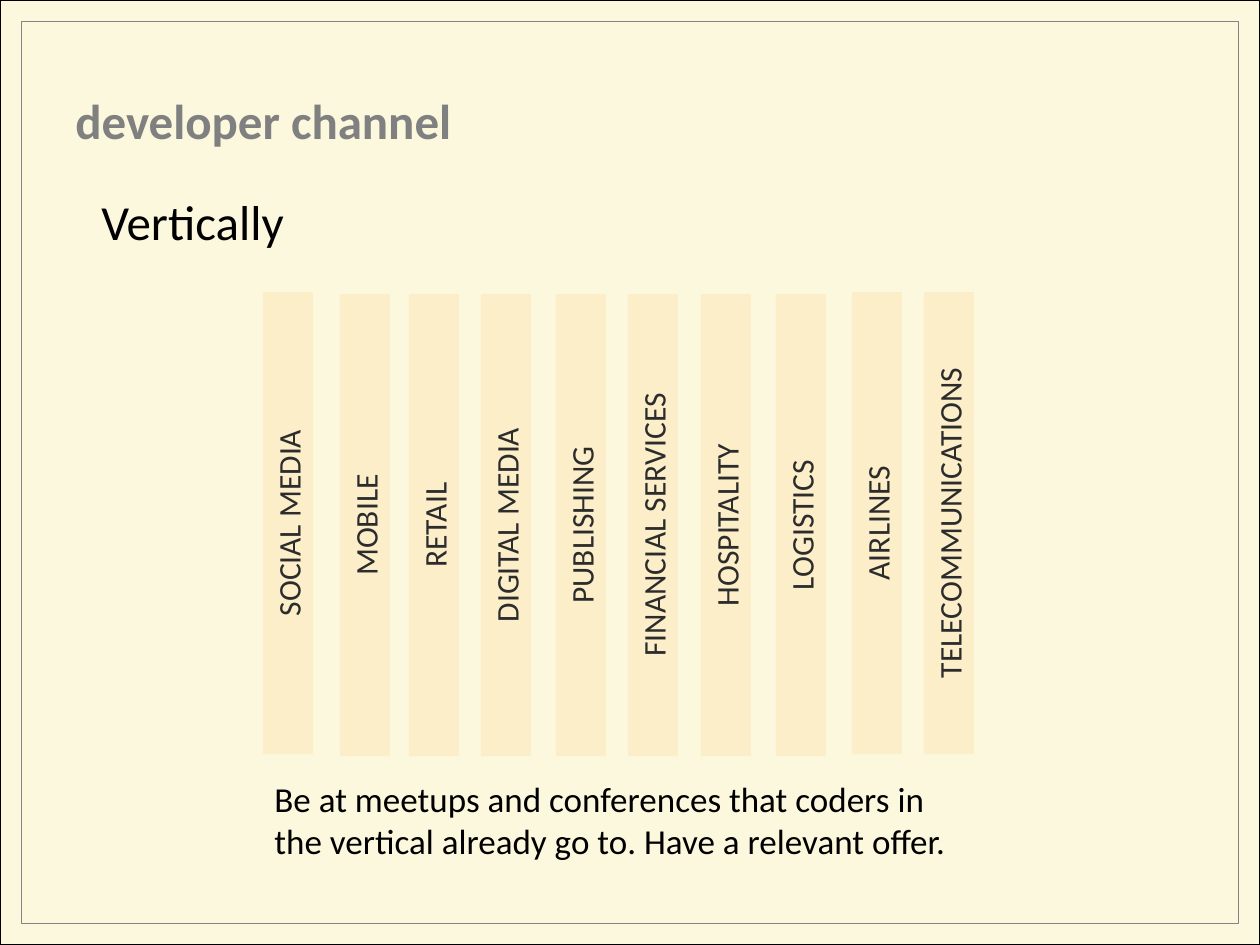
"""Build the developer channel slide with its ten vertical market bars."""
from dataclasses import dataclass

from pptx import Presentation
from pptx import util as u
from pptx.dml.color import RGBColor
from pptx.enum import shapes, text

EMU_PER_PX = 914400 / 126


@dataclass(frozen=True)
class Theme:
    font: str = "Calibri"
    paper: str = "FCF8DE"
    edge: str = "000000"
    frame: str = "848484"
    bar: str = "FBEEC9"
    bar_ink: str = "2C2C2C"
    ink: str = "000000"
    title_ink: str = "808080"
    heading_size: int = 28
    caption_size: int = 20
    bar_size: int = 18


@dataclass(frozen=True)
class Box:
    left: int
    top: int
    width: int
    height: int


@dataclass(frozen=True)
class Bar:
    label: str
    centre: int
    middle: int = 525


@dataclass(frozen=True)
class Label:
    words: str
    box: Box
    size: int
    color: str
    bold: bool = False


THEME = Theme()
BAR_LENGTH, BAR_BREADTH = 462, 50
RAISED = 523
BARS = [
    Bar("SOCIAL MEDIA", 288, RAISED),
    Bar("MOBILE", 365),
    Bar("RETAIL", 434),
    Bar("DIGITAL MEDIA", 506),
    Bar("PUBLISHING", 581),
    Bar("FINANCIAL SERVICES", 653),
    Bar("HOSPITALITY", 726),
    Bar("LOGISTICS", 801),
    Bar("AIRLINES", 877, RAISED),
    Bar("TELECOMMUNICATIONS", 949, RAISED),
]
LABELS = [
    Label("Vertically", Box(89, 179, 478, 84), THEME.heading_size, THEME.ink),
    Label("Be at meetups and conferences that coders in the vertical already go to. "
          "Have a relevant offer.",
          Box(262, 777, 712, 84), THEME.caption_size, THEME.ink),
    Label("developer channel", Box(63, 84, 1134, 72), THEME.heading_size,
          THEME.title_ink, True),
]


def px(length: int) -> u.Emu:
    """Turn pixels into EMU."""
    return u.Emu(round(length * EMU_PER_PX))


def place(box: Box) -> tuple:
    """Give a box as left, top, width and height in EMU."""
    return px(box.left), px(box.top), px(box.width), px(box.height)


def write(shape, words: str, size: int, color: str, align, bold: bool = False) -> None:
    """Write one paragraph, vertically centred, into a shape."""
    frame = shape.text_frame
    frame.word_wrap = True
    frame.vertical_anchor = text.MSO_ANCHOR.MIDDLE
    para = frame.paragraphs[0]
    para.text = words
    para.alignment = align
    para.font.name = THEME.font
    para.font.size = u.Pt(size)
    para.font.bold = bold
    para.font.color.rgb = RGBColor.from_string(color)


def draw_rectangle(page, box: Box, fill: str = "", line: str = "", weight: float = 0):
    """Draw a rectangle with an optional fill and outline."""
    shape = page.shapes.add_shape(shapes.MSO_SHAPE.RECTANGLE, *place(box))
    shape.shadow.inherit = False
    if fill:
        shape.fill.solid()
        shape.fill.fore_color.rgb = RGBColor.from_string(fill)
    else:
        shape.fill.background()
    if line:
        shape.line.color.rgb = RGBColor.from_string(line)
        shape.line.width = u.Pt(weight)
    else:
        shape.line.fill.background()
    return shape


def draw_bar(page, bar: Bar) -> None:
    """Draw a bar turned to read upwards."""
    box = Box(bar.centre - BAR_LENGTH // 2, bar.middle - BAR_BREADTH // 2,
              BAR_LENGTH, BAR_BREADTH)
    shape = draw_rectangle(page, box, THEME.bar)
    shape.rotation = 270
    write(shape, bar.label, THEME.bar_size, THEME.bar_ink, text.PP_ALIGN.CENTER)


def draw_label(page, label: Label) -> None:
    """Draw a left-aligned text box."""
    shape = page.shapes.add_textbox(*place(label.box))
    write(shape, label.words, label.size, label.color, text.PP_ALIGN.LEFT, label.bold)


def main() -> None:
    """Build and save the deck."""
    deck = Presentation()
    deck.slide_width, deck.slide_height = px(1260), px(945)
    page = deck.slides.add_slide(deck.slide_layouts[6])
    draw_rectangle(page, Box(0, 0, 1260, 945), THEME.paper, THEME.edge, 0.75)
    draw_rectangle(page, Box(21, 21, 1218, 903), line=THEME.frame, weight=0.5)
    for bar in BARS:
        draw_bar(page, bar)
    for label in LABELS:
        draw_label(page, label)
    deck.save("out.pptx")


if __name__ == "__main__":
    main()
